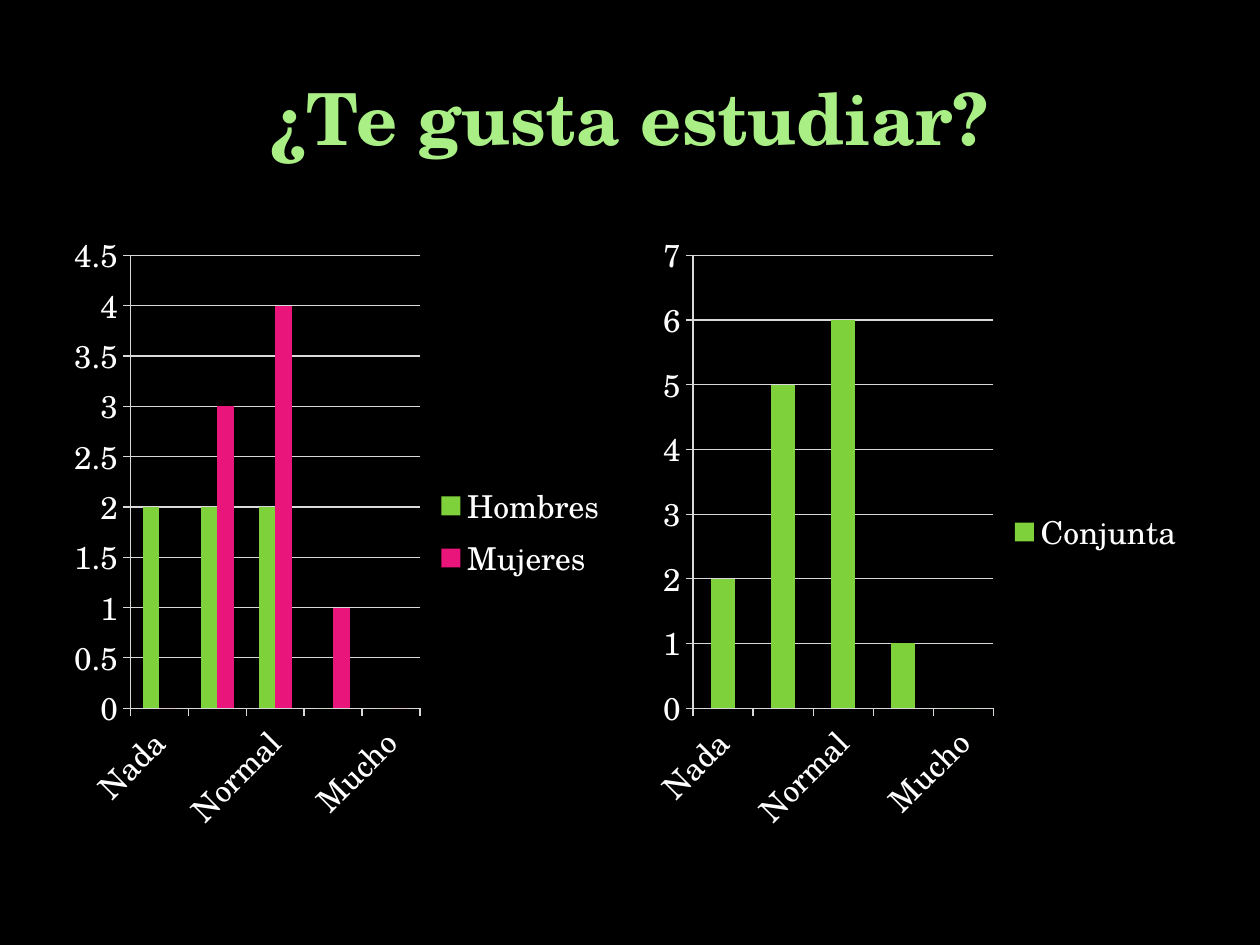
import pptx
import pptx.chart.data
import pptx.dml.color
import pptx.enum.chart
import pptx.enum.text
import pptx.util

EMU_PER_PX = 914400 / 126
FONT = "TeX Gyre Schola"
COLORS = {
    "background": "000000",
    "title": "A9EF86",
    "text": "FFFFFF",
    "line": "D9D9D9",
    "green": "7FD13B",
    "pink": "EA157A",
}
ANSWERS = ["Nada", "Poco", "Normal", "Bastante", "Mucho"]


def px(length):
    return pptx.util.Emu(round(length * EMU_PER_PX))


def color(name):
    return pptx.dml.color.RGBColor.from_string(COLORS[name])


def format_font(font, size, fill, bold=False):
    font.name = FONT
    font.size = pptx.util.Pt(size)
    font.bold = bold
    font.color.rgb = color(fill)


def write_text(para, text, **style):
    span = para.add_run()
    span.text = text
    format_font(span.font, **style)


class SlideBuilder:
    def __init__(self, deck):
        self.page = deck.slides.add_slide(deck.slide_layouts[6])
        fill = self.page.background.fill
        fill.solid()
        fill.fore_color.rgb = color("background")

    def title(self, text, left, top, width, height):
        box = self.page.shapes.add_textbox(px(left), px(top), px(width), px(height))
        frame = box.text_frame
        frame.word_wrap = True
        frame.vertical_anchor = pptx.enum.text.MSO_ANCHOR.MIDDLE
        para = frame.paragraphs[0]
        para.alignment = pptx.enum.text.PP_ALIGN.CENTER
        write_text(para, text, size=41, fill="title", bold=True)

    def column_chart(self, series, left, top, width, height):
        data = pptx.chart.data.CategoryChartData()
        data.categories = ANSWERS
        for name, values, _ in series:
            data.add_series(name, values)
        chart = self.page.shapes.add_chart(
            pptx.enum.chart.XL_CHART_TYPE.COLUMN_CLUSTERED,
            px(left), px(top), px(width), px(height), data,
        ).chart
        chart.has_title = False
        format_font(chart.font, size=18, fill="text")
        chart.has_legend = True
        chart.legend.position = pptx.enum.chart.XL_LEGEND_POSITION.RIGHT
        chart.legend.include_in_layout = False

        plot = chart.plots[0]
        plot.vary_by_categories = False
        plot.gap_width = 150
        plot.overlap = 0
        for column, (_, _, fill) in zip(plot.series, series):
            column.invert_if_negative = False
            column.format.fill.solid()
            column.format.fill.fore_color.rgb = color(fill)

        chart.value_axis.has_major_gridlines = True
        lines = [chart.value_axis.major_gridlines.format.line]
        for axis in (chart.category_axis, chart.value_axis):
            axis.major_tick_mark = pptx.enum.chart.XL_TICK_MARK.OUTSIDE
            axis.minor_tick_mark = pptx.enum.chart.XL_TICK_MARK.NONE
            lines.append(axis.format.line)
        for line in lines:
            line.color.rgb = color("line")
            line.width = pptx.util.Pt(0.75)


def main():
    deck = pptx.Presentation()
    deck.slide_width, deck.slide_height = px(1260), px(945)
    slide = SlideBuilder(deck)
    slide.title("¿Te gusta estudiar?", 63, 38, 1134, 157)

    charts = [
        [("Hombres", (2, 2, 2, 0, 0), "green"), ("Mujeres", (0, 3, 4, 1, 0), "pink")],
        [("Conjunta", (2, 5, 6, 1, 0), "green")],
    ]
    margin, gap, width = 63, 20, 557
    for index, series in enumerate(charts):
        slide.column_chart(series, margin + index * (width + gap), 220, width, 624)
    deck.save("out.pptx")


if __name__ == "__main__":
    main()
